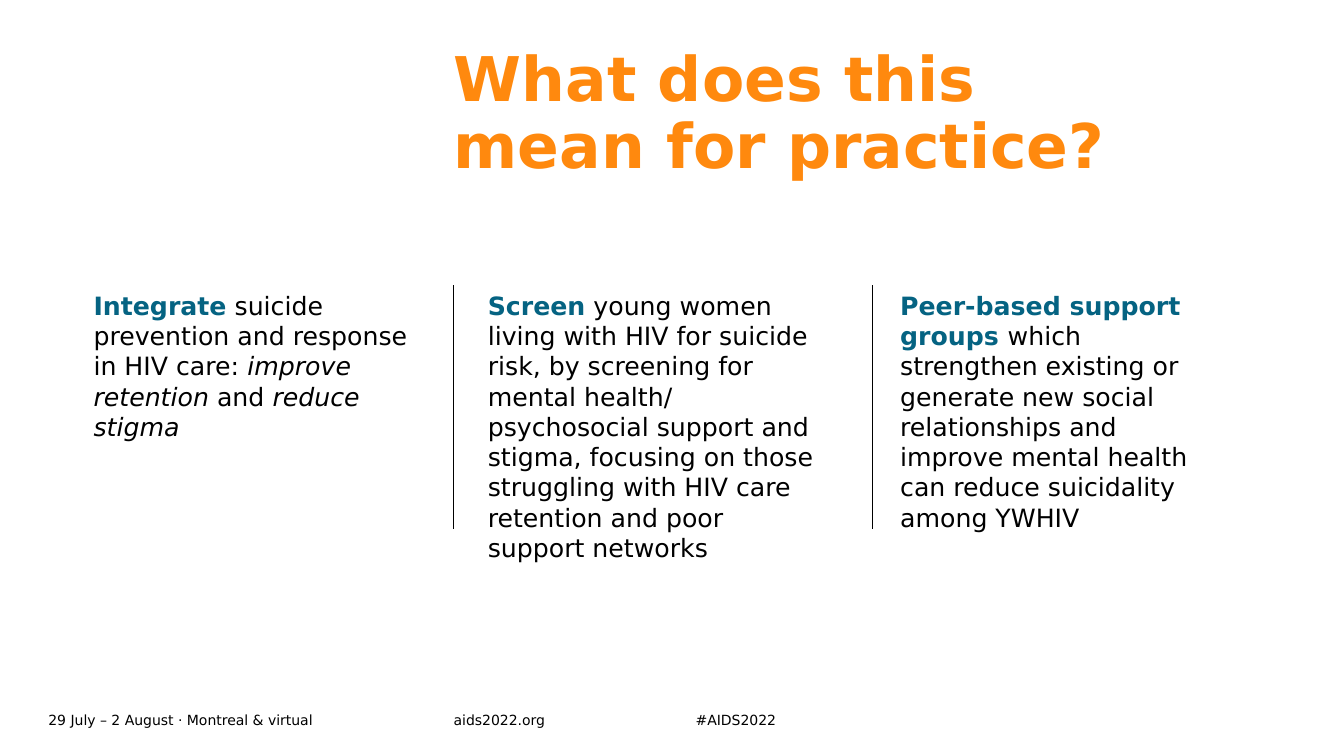
"""Build the slide on what the findings mean for practice."""
import pptx
import pptx.dml.color
import pptx.enum.shapes
import pptx.enum.text
import pptx.oxml.ns
import pptx.util
from lxml import etree

Inches = pptx.util.Inches
Pt = pptx.util.Pt
RGBColor = pptx.dml.color.RGBColor
MSO_ANCHOR = pptx.enum.text.MSO_ANCHOR

ORANGE = RGBColor(0xFF, 0x89, 0x0E)
TEAL = RGBColor(0x05, 0x63, 0x82)
BLACK = RGBColor(0x00, 0x00, 0x00)
FONT = "DejaVu Sans"

deck = pptx.Presentation()
deck.slide_width = Inches(13.33)
deck.slide_height = Inches(7.5)
page = deck.slides.add_slide(deck.slide_layouts[6])


def add_text_box(left, top, width, height, has_margins=False):
    """Add a wrapping text box and return its text frame."""
    box = page.shapes.add_textbox(Inches(left), Inches(top), Inches(width), Inches(height))
    frame = box.text_frame
    frame.word_wrap = True
    if not has_margins:
        frame.margin_left = frame.margin_right = 0
        frame.margin_top = frame.margin_bottom = 0
    return frame


def add_span(para, text, size, color, bold=False, italic=False):
    """Add one formatted run to a paragraph."""
    span = para.add_run()
    span.text = text
    span.font.name = FONT
    span.font.size = Pt(size)
    span.font.color.rgb = color
    span.font.bold = bold
    span.font.italic = italic


footers = [
    (0.48, 4.02, "29 July – 2 August · Montreal & virtual"),
    (4.5, 1.93, "aids2022.org"),
    (6.9, 1.93, "#AIDS2022"),
]
for left, width, text in footers:
    frame = add_text_box(left, 7.02, width, 0.24)
    frame.vertical_anchor = MSO_ANCHOR.MIDDLE
    add_span(frame.paragraphs[0], text, 10, BLACK)

title = add_text_box(4.5, 0.48, 7.14, 1.34).paragraphs[0]
title.line_spacing = 0.9
add_span(title, "What does this mean for practice?", 44, ORANGE, bold=True)

columns = [
    (0.83, 1.62, "Integrate", [
        (" suicide prevention and response in HIV care: ", False),
        ("improve retention", True),
        (" and ", False),
        ("reduce stigma", True),
    ]),
    (4.74, 2.83, "Screen", [
        (" young women living with HIV for suicide risk, by screening for "
         "mental health/ psychosocial support and stigma, focusing on those "
         "struggling with HIV care retention and poor support networks", False),
    ]),
    (8.83, 2.93, "Peer-based support groups ", [
        ("which strengthen existing or generate new social relationships and "
         "improve mental health can reduce suicidality among YWHIV", False),
    ]),
]
for left, height, keyword, parts in columns:
    para = add_text_box(left, 2.83, 3.43, height, has_margins=True).paragraphs[0]
    add_span(para, keyword, 18, TEAL, bold=True)
    for text, italic in parts:
        add_span(para, text, 18, BLACK, italic=italic)

for x in (4.5, 8.65):
    divider = page.shapes.add_connector(
        pptx.enum.shapes.MSO_CONNECTOR.STRAIGHT,
        Inches(x), Inches(2.83), Inches(x), Inches(5.25))
    divider.line.color.rgb = BLACK
    divider.line.width = Pt(0.5)
    etree.SubElement(divider._element.spPr, pptx.oxml.ns.qn("a:effectLst"))

deck.save("out.pptx")
